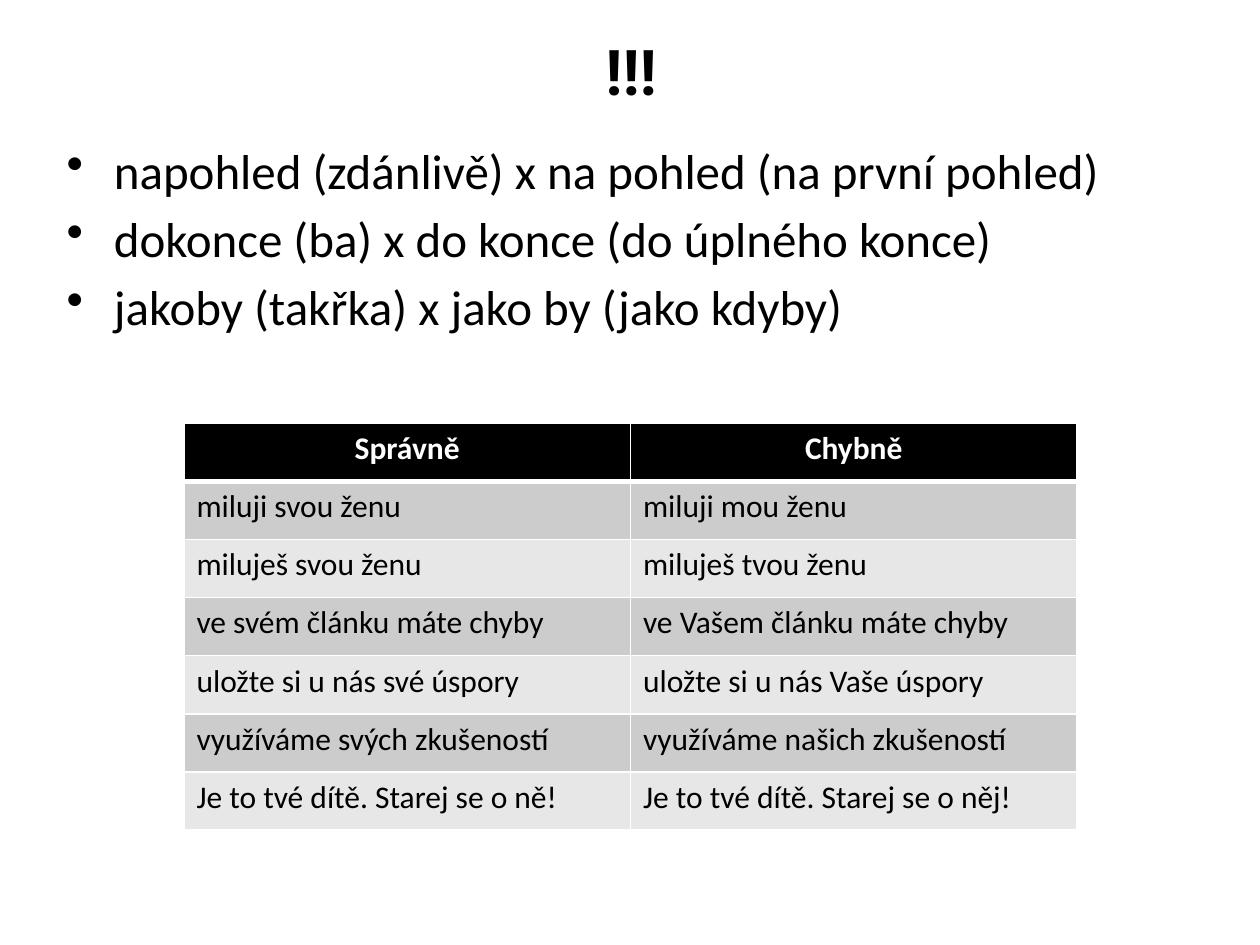
"""Build a Czech usage slide with a bullet list and a table of right and wrong phrases."""
from dataclasses import dataclass

from lxml import etree
from pptx import Presentation
from pptx.dml.color import RGBColor
from pptx.enum.text import MSO_ANCHOR, PP_ALIGN
from pptx.oxml.ns import qn
from pptx.util import Pt

CENTER, LEFT = PP_ALIGN.CENTER, PP_ALIGN.LEFT
MIDDLE, TOP = MSO_ANCHOR.MIDDLE, MSO_ANCHOR.TOP
BLACK = RGBColor(0x00, 0x00, 0x00)
WHITE = RGBColor(0xFF, 0xFF, 0xFF)
DARK_BAND = RGBColor(0xCC, 0xCC, 0xCC)
LIGHT_BAND = RGBColor(0xE7, 0xE7, 0xE7)


@dataclass(frozen=True)
class Area:
    left: float
    top: float
    width: float
    height: float

    def lengths(self):
        return Pt(self.left), Pt(self.top), Pt(self.width), Pt(self.height)


@dataclass(frozen=True)
class TextStyle:
    size: float
    font: str = "Calibri"
    color: RGBColor = BLACK
    bold: bool = False
    align: PP_ALIGN = LEFT


TITLE_STYLE = TextStyle(36, font="Roboto", bold=True, align=CENTER)
LIST_STYLE = TextStyle(28)
HEADER_STYLE = TextStyle(18, color=WHITE, bold=True, align=CENTER)
CELL_STYLE = TextStyle(18)

TITLE_AREA = Area(36.7, 15.1, 648, 49.7)
LIST_AREA = Area(31, 77, 657, 124.5)
TABLE_AREA = Area(105.1, 241.9, 510.4, 232.4)
BULLET_INDENT = 27

WORD_PAIRS = [
    "napohled (zdánlivě) x na pohled (na první pohled)",
    "dokonce (ba) x do konce (do úplného konce)",
    "jakoby (takřka) x jako by (jako kdyby)",
]
PHRASES = [
    ("Správně", "Chybně"),
    ("miluji svou ženu", "miluji mou ženu"),
    ("miluješ svou ženu", "miluješ tvou ženu"),
    ("ve svém článku máte chyby", "ve Vašem článku máte chyby"),
    ("uložte si u nás své úspory", "uložte si u nás Vaše úspory"),
    ("využíváme svých zkušeností", "využíváme našich zkušeností"),
    ("Je to tvé dítě. Starej se o ně!", "Je to tvé dítě. Starej se o něj!"),
]


def write_para(para, text: str, style: TextStyle) -> None:
    para.text = text
    para.alignment = style.align
    para.font.size = Pt(style.size)
    para.font.name = style.font
    para.font.bold = style.bold
    para.font.color.rgb = style.color


def add_bullet(para) -> None:
    properties = para._p.get_or_add_pPr()
    properties.set("marL", str(Pt(BULLET_INDENT)))
    properties.set("indent", str(-Pt(BULLET_INDENT)))
    etree.SubElement(properties, qn("a:buChar"), char="•")
    para.space_before = Pt(5)


def add_text(page, area: Area, lines: list[str], style: TextStyle,
             anchor: MSO_ANCHOR = TOP, bulleted: bool = False) -> None:
    frame = page.shapes.add_textbox(*area.lengths()).text_frame
    frame.word_wrap = True
    frame.vertical_anchor = anchor
    for index, line in enumerate(lines):
        para = frame.add_paragraph() if index else frame.paragraphs[0]
        if bulleted:
            add_bullet(para)
        write_para(para, line, style)


def add_borders(cell, top: float, bottom: float) -> None:
    properties = cell._tc.get_or_add_tcPr()
    for side, width in (("L", 1), ("R", 1), ("T", top), ("B", bottom)):
        line = etree.SubElement(properties, qn(f"a:ln{side}"), w=str(Pt(width)))
        fill = etree.SubElement(line, qn("a:solidFill"))
        etree.SubElement(fill, qn("a:srgbClr"), val=str(WHITE))


def add_phrase_table(page, area: Area, phrases: list[tuple[str, str]]) -> None:
    table = page.shapes.add_table(len(phrases), len(phrases[0]), *area.lengths()).table
    for row, texts in enumerate(phrases):
        is_header = row == 0
        band = DARK_BAND if row % 2 else LIGHT_BAND
        for column, text in enumerate(texts):
            cell = table.cell(row, column)
            add_borders(cell, top=3 if row == 1 else 1, bottom=3 if is_header else 1)
            cell.fill.solid()
            cell.fill.fore_color.rgb = BLACK if is_header else band
            style = HEADER_STYLE if is_header else CELL_STYLE
            write_para(cell.text_frame.paragraphs[0], text, style)


def main() -> None:
    deck = Presentation()
    deck.slide_width, deck.slide_height = Pt(720), Pt(540)
    page = deck.slides.add_slide(deck.slide_layouts[6])
    add_text(page, LIST_AREA, WORD_PAIRS, LIST_STYLE, bulleted=True)
    add_text(page, TITLE_AREA, ["!!!"], TITLE_STYLE, anchor=MIDDLE)
    add_phrase_table(page, TABLE_AREA, PHRASES)
    deck.save("out.pptx")


if __name__ == "__main__":
    main()
